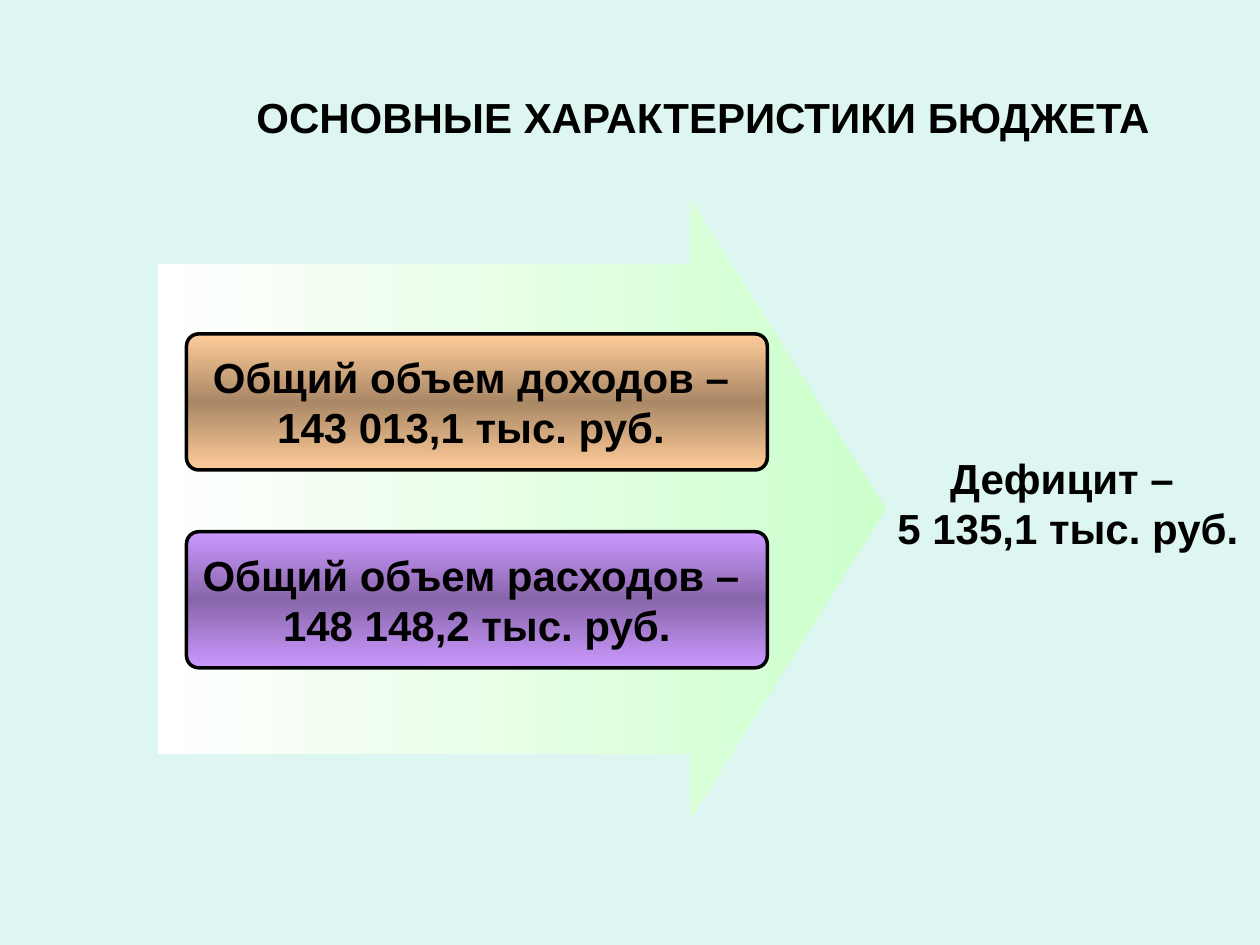
"""Builds the slide with the main figures of the budget."""
import copy

import pptx
import pptx.dml.color
import pptx.enum.shapes
import pptx.enum.text
import pptx.oxml.ns
import pptx.util

Inches = pptx.util.Inches
RGB = pptx.dml.color.RGBColor
SHAPE = pptx.enum.shapes.MSO_SHAPE

BLACK = RGB(0x00, 0x00, 0x00)
WHITE = RGB(0xFF, 0xFF, 0xFF)
BACKGROUND = RGB(0xDE, 0xF6, 0xF1)
GREEN = RGB(0xCC, 0xFF, 0xCC)
ORANGE = RGB(0xFF, 0xCC, 0x99)
BROWN = RGB(0xAA, 0x88, 0x66)
LILAC = RGB(0xCC, 0x99, 0xFF)
PURPLE = RGB(0x88, 0x66, 0xAA)

TITLE = ["ОСНОВНЫЕ ХАРАКТЕРИСТИКИ БЮДЖЕТА"]
CARDS = [
    (["Общий объем доходов – ", "143 013,1 тыс. руб. "], [ORANGE, BROWN, ORANGE]),
    (["Общий объем расходов – ", "148 148,2 тыс. руб."], [LILAC, PURPLE, LILAC]),
]
DEFICIT = ["Дефицит – ", "5 135,1 тыс. руб."]

CARD_LEFT, CARD_TOP, CARD_W, CARD_H, CARD_STEP = 1.48, 2.65, 4.61, 1.08, 1.57
CARD_CORNER = 0.09


def set_gradient(sp, colors, angle):
    sp.fill.gradient()
    sp.fill.gradient_angle = angle
    stops = sp._element.spPr.find(".//" + pptx.oxml.ns.qn("a:gsLst"))
    for _ in colors[2:]:
        stops.append(copy.deepcopy(stops[0]))
    for i, (stop, color) in enumerate(zip(sp.fill.gradient_stops, colors)):
        stop.position = i / (len(colors) - 1)
        stop.color.rgb = color


def add_text(sp, lines, wrap=True):
    tf = sp.text_frame
    tf.word_wrap = wrap
    tf.vertical_anchor = pptx.enum.text.MSO_ANCHOR.MIDDLE
    for i, line in enumerate(lines):
        p = tf.add_paragraph() if i else tf.paragraphs[0]
        p.alignment = pptx.enum.text.PP_ALIGN.CENTER
        r = p.add_run()
        r.text = line
        r.font.name = "Arial"
        r.font.size = pptx.util.Pt(24)
        r.font.bold = True
        r.font.color.rgb = BLACK


def add_shape(s, kind, box, adjustments):
    sp = s.shapes.add_shape(kind, *map(Inches, box))
    sp.shadow.inherit = False
    sp.fill.background()
    sp.line.fill.background()
    for i, value in enumerate(adjustments):
        sp.adjustments[i] = value
    return sp


def main():
    prs = pptx.Presentation()
    prs.slide_width, prs.slide_height = Inches(10), Inches(7.5)
    s = prs.slides.add_slide(prs.slide_layouts[6])
    s.background.fill.solid()
    s.background.fill.fore_color.rgb = BACKGROUND

    add_text(s.shapes.add_textbox(*map(Inches, (1.58, 0.3, 8, 1.25))), TITLE)

    arrow = add_shape(s, SHAPE.RIGHT_ARROW, (1.25, 1.58, 5.78, 4.92), [0.79, 0.315])
    set_gradient(arrow, [WHITE, GREEN], 0)

    for i, (lines, colors) in enumerate(CARDS):
        box = (CARD_LEFT, CARD_TOP + i * CARD_STEP, CARD_W, CARD_H)
        card = add_shape(s, SHAPE.ROUNDED_RECTANGLE, box, [CARD_CORNER])
        set_gradient(card, colors, 270)
        card.line.color.rgb = BLACK
        card.line.width = pptx.util.Pt(2)
        add_text(card, lines, wrap=False)

    deficit = add_shape(s, SHAPE.ROUNDED_RECTANGLE, (6.95, 3.28, 3.05, 1.42), [CARD_CORNER])
    add_text(deficit, DEFICIT)

    prs.save("out.pptx")


if __name__ == "__main__":
    main()
